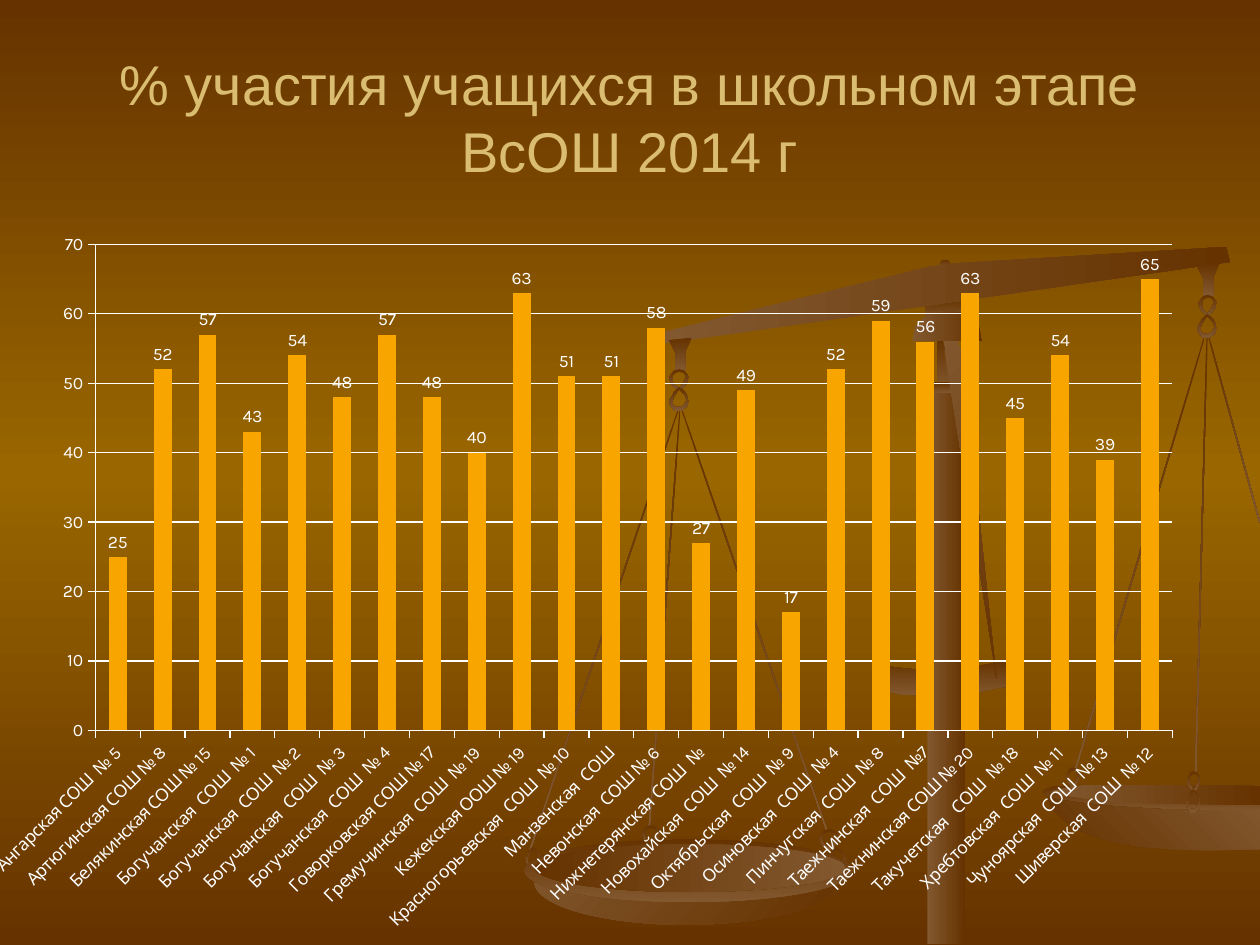
"""Build a slide with a column chart of school olympiad participation over a pair of scales."""
import copy

import pptx
import pptx.chart.data
import pptx.dml.color
import pptx.enum.chart
import pptx.enum.shapes
import pptx.enum.text
import pptx.oxml
import pptx.oxml.ns
import pptx.util
from lxml import etree

Inches = pptx.util.Inches
Pt = pptx.util.Pt
qn = pptx.oxml.ns.qn
RGB = pptx.dml.color.RGBColor.from_string
KIND = pptx.enum.shapes.MSO_SHAPE
COLORS = {"brown": "663300", "ochre": "996600", "gold": "DBBD71", "bar": "F8A500", "white": "FFFFFF"}

deck = pptx.Presentation()
deck.slide_width, deck.slide_height = Inches(10), Inches(7.5)
page = deck.slides.add_slide(deck.slide_layouts[5])


def paint(shape, angle, light_first=False):
    """Fill a shape with a brown gradient that has one tinted end."""
    shape.shadow.inherit = False
    shape.line.fill.background()
    shape.fill.gradient()
    shape.fill.gradient_angle = -angle % 360
    for stop in shape.fill.gradient_stops:
        stop.color.rgb = RGB(COLORS["brown"])
    ends = list(shape.element.spPr.iter(qn("a:srgbClr")))
    light = ends[0 if light_first else 1]
    etree.SubElement(light, qn("a:gamma"))
    etree.SubElement(light, qn("a:tint")).set("val", "81500")
    etree.SubElement(light, qn("a:invGamma"))


def outline(*contours):
    """Draw closed contours given in hundredths of an inch."""
    builder = page.shapes.build_freeform(*contours[0][0], scale=Inches(0.01))
    for index, contour in enumerate(contours):
        if index:
            builder.move_to(*contour[0])
        builder.add_line_segments(contour[1:], close=True)
    return builder.convert_to_shape()


fill = page.background.fill
fill.gradient()
fill.gradient_angle = 270
stop_list = page.background.fill.gradient_stops
for stop in stop_list:
    stop.color.rgb = RGB(COLORS["brown"])
first = next(page.element.iter(qn("a:gs")))
middle = copy.deepcopy(first)
middle.set("pos", "50000")
middle.find(qn("a:srgbClr")).set("val", COLORS["ochre"])
first.addnext(middle)

for kind, box, turn in [
    (KIND.RECTANGLE, (7.34, 2.37, 0.34, 0.18), 0),
    (KIND.OVAL, (7.46, 2.06, 0.08, 0.08), 0),
    (KIND.RECTANGLE, (9.04, 2.6, 0.01, 3.6), 16.6),
    (KIND.RECTANGLE, (9.53, 2.66, 0.01, 3.47), 1.5),
    (KIND.RECTANGLE, (9.79, 2.64, 0.01, 1.53), 344.6),
    (KIND.RECTANGLE, (5.98, 3.15, 0.01, 3.53), 341),
    (KIND.RECTANGLE, (4.79, 3.16, 0.01, 3.68), 18.6),
    (KIND.RECTANGLE, (5.27, 3.25, 0.01, 3.31), 4.2),
]:
    shape = page.shapes.add_shape(kind, *map(Inches, box))
    shape.rotation = turn
    paint(shape, 90)

bracket = [(697, 528), (724, 531), (739, 531), (757, 530), (778, 528), (802, 524), (804, 544),
           (782, 548), (768, 551), (751, 552), (733, 552), (714, 551), (696, 547)]
right_rim = [(958, 624), (910, 624), (865, 623), (846, 624), (836, 624), (831, 626), (827, 628),
             (832, 633), (842, 636), (863, 639), (894, 642), (935, 644), (1000, 645), (1000, 626)]
right_bowl = [(831, 633), (835, 642), (842, 649), (852, 657), (865, 663), (882, 668), (903, 672),
              (928, 674), (957, 675), (1000, 674), (1000, 643), (953, 643), (918, 642),
              (886, 640), (857, 637)]
right_inner = [(956, 623), (862, 623), (843, 626), (834, 628), (843, 631), (863, 634), (893, 637),
               (933, 638), (1000, 639), (1000, 624)]
beam = [(973, 196), (976, 208), (525, 273), (524, 264), (737, 212), (759, 209)]
for points, angle, light_first in [
    (bracket, 90, False), (right_rim, 90, False), (right_bowl, 315, False),
    (right_inner, 0, True), (beam, 0, True),
]:
    paint(outline(points), angle, light_first)

hook = [(18, 0), (0, 2), (5, 12), (5, 26), (13, 26), (13, 11)]
for left, top in [(531, 268), (950, 209)]:
    paint(outline([(left + x, top + y) for x, y in hook]), 90)

upper_link = (
    [(47, 100), (73, 82), (93, 59), (100, 35), (73, 6), (47, 0), (27, 6), (7, 29), (0, 41), (13, 71), (33, 88)],
    [(53, 12), (73, 18), (80, 29), (80, 41), (60, 76), (47, 88), (33, 76), (20, 59), (20, 29), (33, 18)],
)
lower_link = (
    [(6, 79), (31, 100), (63, 100), (88, 84), (100, 62), (88, 32), (75, 16), (50, 0), (25, 21), (13, 42), (0, 58)],
    [(19, 58), (25, 42), (38, 26), (50, 11), (81, 37), (88, 58), (69, 79), (56, 84), (31, 84), (19, 74)],
)
for link, boxes in [
    (upper_link, [(846, 609, 11, 17), (531, 293, 16, 17), (951, 234, 15, 17),
                  (942, 612, 11, 17), (509, 655, 15, 16), (650, 658, 16, 17)]),
    (lower_link, [(531, 307, 16, 19), (950, 249, 16, 19), (656, 672, 16, 19),
                  (941, 626, 12, 19), (417, 672, 12, 16)]),
]:
    for left, top, width, height in boxes:
        paint(outline(*[[(left + x * width / 100, top + y * height / 100) for x, y in contour]
                        for contour in link]), 90)

for kind, box, angle, light_first in [
    (KIND.OVAL, (4.24, 6.66, 2.4, 0.68), 45, True),
    (KIND.OVAL, (4.16, 6.66, 2.61, 0.5), 90, False),
    (KIND.OVAL, (4.24, 6.7, 2.47, 0.38), 0, False),
    (KIND.RECTANGLE, (7.36, 3.08, 0.3, 4.41), 0, True),
    (KIND.RECTANGLE, (7.44, 2.68, 0.13, 0.42), 90, False),
    (KIND.ROUNDED_RECTANGLE, (7.33, 3.03, 0.36, 0.09), 90, False),
]:
    paint(page.shapes.add_shape(kind, *map(Inches, box)), angle, light_first)

pointer = [(791, 539), (750, 280), (750, 276), (748, 268), (760, 265), (761, 274), (763, 277)]
cap = [(752, 247), (763, 248), (772, 253), (777, 260), (779, 271), (724, 271), (726, 260), (732, 253), (740, 248)]
paint(outline(pointer), 45, True)
paint(outline(cap), 0, True)

title = page.shapes.title
title.element.getparent().append(title.element)
title.left, title.top, title.width, title.height = map(Inches, (0.5, 0.3, 9, 1.25))
title.text_frame.text = "% участия учащихся в школьном этапе ВсОШ 2014 г"
title.text_frame.vertical_anchor = pptx.enum.text.MSO_ANCHOR.MIDDLE
para = title.text_frame.paragraphs[0]
para.alignment = pptx.enum.text.PP_ALIGN.CENTER
para.font.name, para.font.size = "Arial", Pt(32)
para.font.color.rgb = RGB(COLORS["gold"])

schools = {
    "Ангарская СОШ  № 5": 25, "Артюгинская СОШ № 8": 52, "Белякинская СОШ № 15": 57,
    "Богучанская  СОШ  № 1": 43, "Богучанская  СОШ  № 2": 54, "Богучанская  СОШ  № 3": 48,
    "Богучанская  СОШ  № 4": 57, "Говорковская СОШ № 17": 48, "Гремучинская  СОШ  № 19": 40,
    "Кежекская ООШ № 19": 63, "Красногорьевская  СОШ  № 10": 51, "Манзенская  СОШ": 51,
    "Невонская  СОШ № 6": 58, "Нижнетерянская СОШ  №": 27, "Новохайская  СОШ  № 14": 49,
    "Октябрьская  СОШ  № 9": 17, "Осиновская  СОШ  № 4": 52, "Пинчугская  СОШ  № 8": 59,
    "Таежнинская  СОШ  №7": 56, "Таежнинская СОШ № 20": 63, "Такучетская   СОШ  № 18": 45,
    "Хребтовская  СОШ  № 11": 54, "Чуноярская  СОШ  № 13": 39, "Шиверская  СОШ  № 12": 65,
}
data = pptx.chart.data.CategoryChartData()
data.categories = list(schools)
data.add_series("Series 1", list(schools.values()))
chart = page.shapes.add_chart(pptx.enum.chart.XL_CHART_TYPE.COLUMN_CLUSTERED,
                              *map(Inches, (-0.28, 1.75, 9.78, 5.75)), data).chart
chart.has_legend = chart.has_title = False
chart.font.name, chart.font.size = "Karla", Pt(10)
chart.font.color.rgb = RGB(COLORS["white"])
plot = chart.plots[0]
plot.gap_width, plot.vary_by_categories = 150, False
bars = plot.series[0].format.fill
bars.solid()
bars.fore_color.rgb = RGB(COLORS["bar"])
plot.has_data_labels = True
plot.data_labels.show_value = True
plot.data_labels.position = pptx.enum.chart.XL_LABEL_POSITION.OUTSIDE_END

values = chart.value_axis
values.minimum_scale, values.maximum_scale, values.major_unit = 0, 70, 10
for axis in (chart.category_axis, values):
    axis.major_tick_mark = pptx.enum.chart.XL_TICK_MARK.OUTSIDE
    axis.tick_labels.font.size = Pt(10)
for part in (chart.category_axis, values, values.major_gridlines):
    part.format.line.color.rgb = RGB(COLORS["white"])
    part.format.line.width = Pt(0.75)
labels = chart.category_axis.tick_labels.font
labels.name = "Karla"
labels.color.rgb = RGB(COLORS["white"])
next(chart.category_axis.format.line and chart.element.iter(qn("c:catAx"))).find(
    qn("c:txPr")).find(qn("a:bodyPr")).set("rot", "-2700000")

area = next(chart.element.iter(qn("c:plotArea")))
for old in area.findall(qn("c:layout")):
    area.remove(old)
layout = etree.Element(qn("c:layout"))
area.insert(0, layout)
manual = etree.SubElement(layout, qn("c:manualLayout"))
for tag, value in [("layoutTarget", "inner"), ("xMode", "edge"), ("yMode", "edge"),
                   ("x", "0.106"), ("y", "0.033"), ("w", "0.874"), ("h", "0.671")]:
    etree.SubElement(manual, qn("c:" + tag)).set("val", value)

deck.save("out.pptx")
